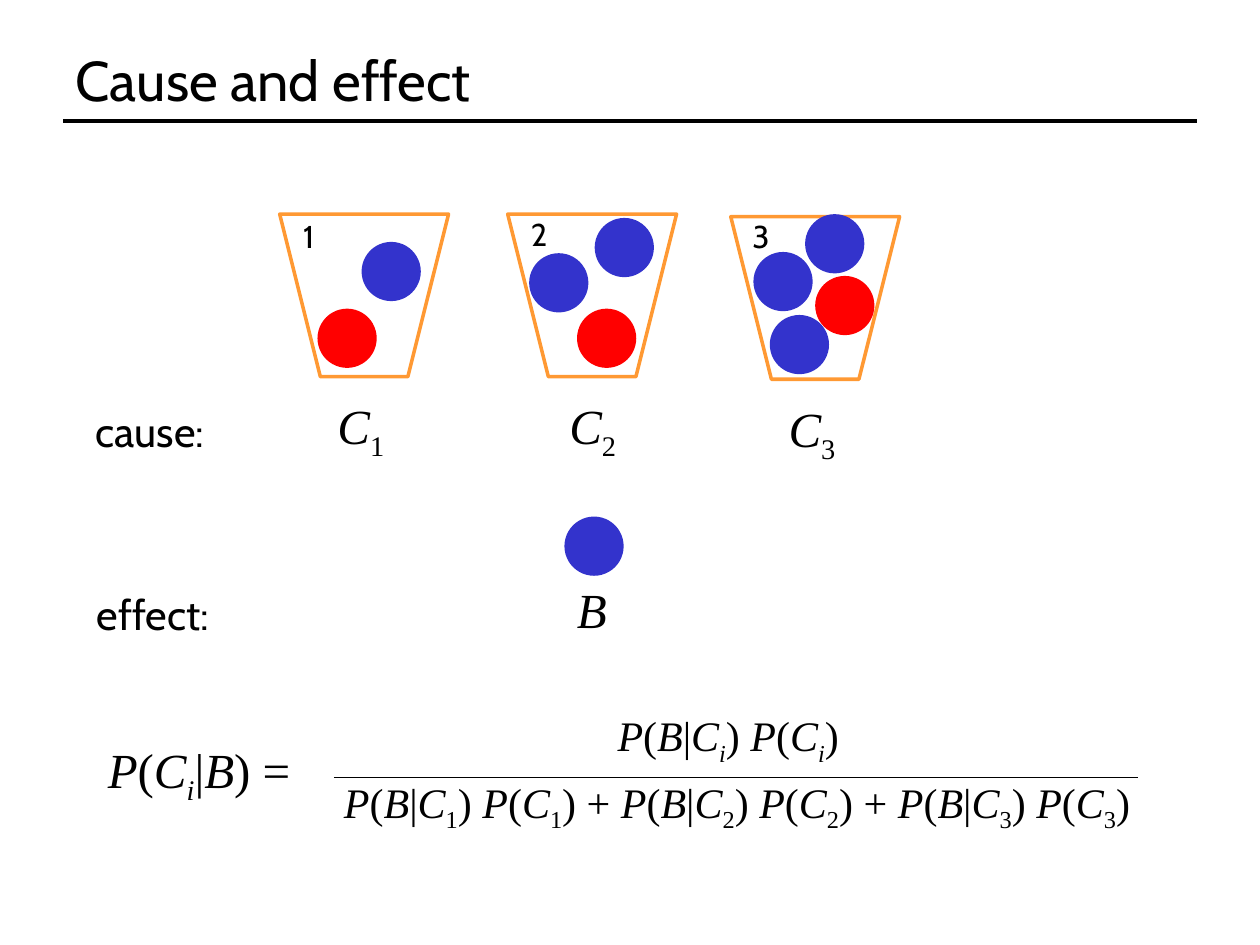
from dataclasses import dataclass

import pptx
import pptx.dml.color
import pptx.enum.shapes
import pptx.enum.text
import pptx.oxml
import pptx.oxml.ns
import pptx.util

COLS, ROWS = 100, 75  # grid cells across and down the slide

SHAPE = pptx.enum.shapes.MSO_SHAPE
ALIGN = pptx.enum.text.PP_ALIGN
Point = tuple[float, float]


@dataclass(frozen=True)
class Theme:
    sans: str = "Cabin"
    serif: str = "Times New Roman"
    ink: str = "000000"
    blue: str = "3333CC"
    red: str = "FF0000"
    urn: str = "FF9933"
    title: int = 32
    symbol: int = 28
    body: int = 24
    tag: int = 18


@dataclass(frozen=True)
class Urn:
    corner: Point
    tag: Point
    label: Point
    red: Point
    blues: tuple[Point, ...]


T = Theme()
BALL, TAG = 4.7, 5
URN_W, URN_H = 13.4, 12.9
URNS = (
    Urn((22.2, 17), (22, 16.2), (25.8, 31.2), (25.2, 24.5), ((28.7, 19.2),)),
    Urn((40.3, 17), (40.3, 16.1), (44.2, 31.2), (45.8, 24.5),
        ((47.2, 17.3), (42, 20.1))),
    Urn((58, 17.2), (57.9, 16.2), (61.6, 31.4), (64.7, 21.9),
        ((63.9, 17), (59.8, 20), (61.1, 25))),
)

prs = pptx.Presentation()
prs.slide_width, prs.slide_height = pptx.util.Inches(10), pptx.util.Inches(7.5)
s = prs.slides.add_slide(prs.slide_layouts[6])


def x(cols: float) -> int:
    return round(prs.slide_width * cols / COLS)


def y(rows: float) -> int:
    return round(prs.slide_height * rows / ROWS)


def rgb(code: str) -> pptx.dml.color.RGBColor:
    return pptx.dml.color.RGBColor.from_string(code)


def add_run(p, text: str, font: str, size: int, italic=False, sub=False) -> None:
    r = p.add_run()
    r.text = text
    r.font.name, r.font.size, r.font.italic = font, pptx.util.Pt(size), italic
    r.font.color.rgb = rgb(T.ink)
    if sub:
        r._r.get_or_add_rPr().set("baseline", "-25000")


def add_formula(p, formula: str, size: int) -> None:
    """Set letters italic, other signs upright, and the sign after _ as subscript."""
    runs: list[tuple[str, bool, bool]] = []
    sub = False
    for sign in formula:
        if sign == "_":
            sub = True
            continue
        style = (sign.isalpha(), sub)
        if runs and runs[-1][1:] == style:
            runs[-1] = (runs[-1][0] + sign, *style)
        else:
            runs.append((sign, *style))
        sub = False
    for text, italic, low in runs:
        add_run(p, text, T.serif, size, italic, low)


def add_box(at: Point, w: float, h: float, align=ALIGN.LEFT):
    """Add an unwrapped text box and return its first paragraph."""
    tf = s.shapes.add_textbox(x(at[0]), y(at[1]), x(w), y(h)).text_frame
    tf.word_wrap = False
    tf.vertical_anchor = pptx.enum.text.MSO_ANCHOR.MIDDLE
    p = tf.paragraphs[0]
    p.alignment = align
    return p


def add_shape(kind, at: Point, w: float, h: float, fill="", line=""):
    sp = s.shapes.add_shape(kind, x(at[0]), y(at[1]), x(w), y(h))
    sp.shadow.inherit = False
    if fill:
        sp.fill.solid()
        sp.fill.fore_color.rgb = rgb(fill)
    else:
        sp.fill.background()
    if line:
        sp.line.color.rgb = rgb(line)
        sp.line.width = pptx.util.Pt(2)
    else:
        sp.line.fill.background()
    return sp


def add_ball(at: Point, color: str) -> None:
    add_shape(SHAPE.OVAL, at, BALL, BALL, fill=color)


def add_rule(left: float, right: float, row: float, width: float) -> None:
    c = s.shapes.add_connector(pptx.enum.shapes.MSO_CONNECTOR.STRAIGHT,
                               x(left), y(row), x(right), y(row))
    c.line.color.rgb = rgb(T.ink)
    c.line.width = pptx.util.Pt(width)
    c._element.spPr.append(pptx.oxml.parse_xml(
        f'<a:effectLst {pptx.oxml.ns.nsdecls("a")}/>'))


def add_urn(number: int, urn: Urn) -> None:
    sp = add_shape(SHAPE.TRAPEZOID, urn.corner, URN_W, URN_H, line=T.urn)
    sp._element.spPr.xfrm.set("flipV", "1")
    add_ball(urn.red, T.red)
    for at in urn.blues:
        add_ball(at, T.blue)
    tf = add_shape(SHAPE.OVAL, urn.tag, TAG, TAG).text_frame
    tf.word_wrap = False
    tf.vertical_anchor = pptx.enum.text.MSO_ANCHOR.MIDDLE
    tf.paragraphs[0].alignment = ALIGN.CENTER
    add_run(tf.paragraphs[0], str(number), T.sans, T.tag)
    add_formula(add_box(urn.label, 6.1, 5.7), f"C_{number}", T.symbol)


add_rule(5, 95, 9.6, 2)
add_run(add_box((5, 3), 90, 6.6), "Cause and effect", T.sans, T.title)

for number, urn in enumerate(URNS, start=1):
    add_urn(number, urn)

add_run(add_box((6.6, 31.7), 11.3, 5), "cause:", T.sans, T.body)
add_run(add_box((6.7, 46.2), 11.2, 5), "effect:", T.sans, T.body)
add_ball((44.8, 41), T.blue)
add_formula(add_box((44.8, 45.5), 4.4, 5.7), "B", T.symbol)

evidence = " + ".join(f"P(B|C_{n}) P(C_{n})" for n in range(1, len(URNS) + 1))
add_formula(add_box((7, 58.5), 17.6, 5.7, ALIGN.CENTER), "P(C_i|B) =", T.symbol)
add_formula(add_box((47.8, 56.1), 20, 5, ALIGN.CENTER), "P(B|C_i) P(C_i)", T.body)
add_rule(26.5, 90.3, 61.7, 0.5)
add_formula(add_box((25, 61.4), 67, 5, ALIGN.CENTER), evidence, T.body)

prs.save("out.pptx")
